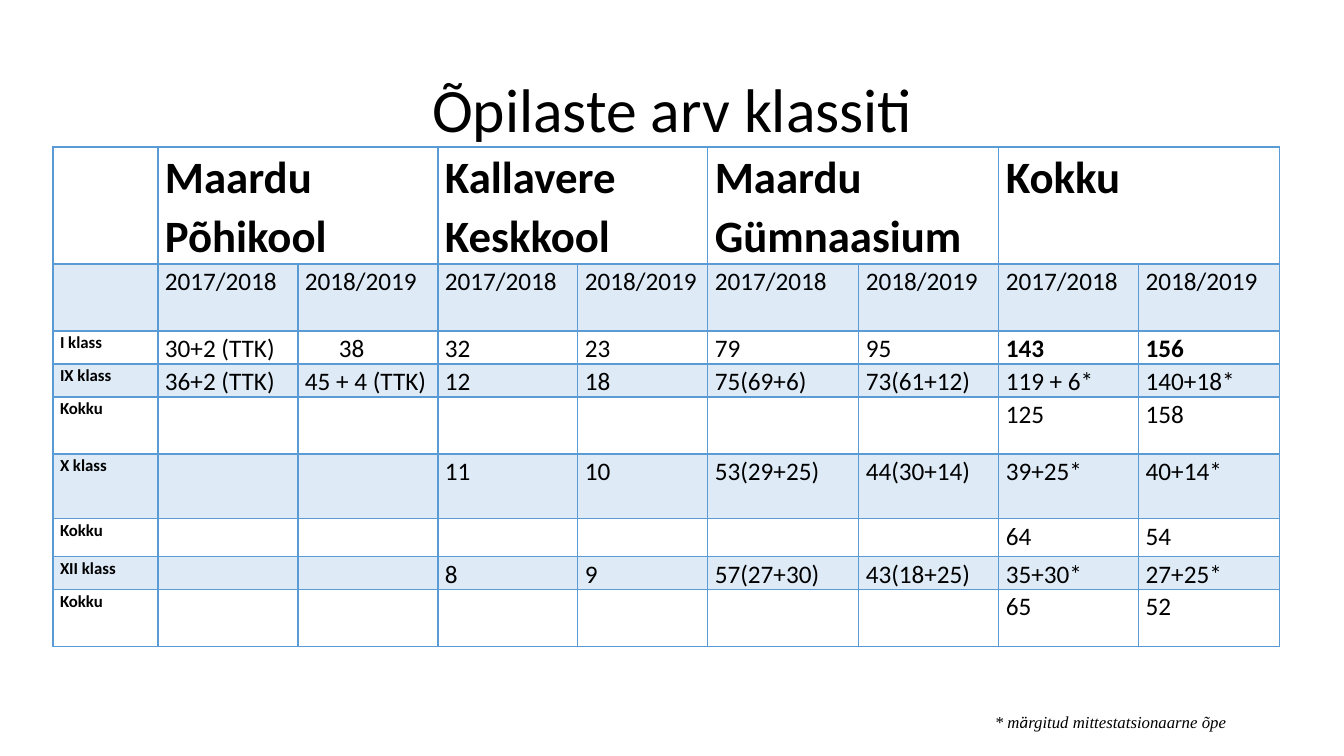
import pptx
import pptx.util
import pptx.dml.color
import pptx.enum.text
import pptx.oxml
import pptx.oxml.ns

PX = 9071.43  # EMU in one px, 100.8 px to the inch
BLUE = pptx.dml.color.RGBColor(0x5B, 0x9B, 0xD5)
PALE = pptx.dml.color.RGBColor(0xDE, 0xEB, 0xF7)
BLACK = pptx.dml.color.RGBColor(0, 0, 0)
ANCHOR = pptx.enum.text.MSO_ANCHOR
ALIGN = pptx.enum.text.PP_ALIGN

WIDTHS = [105, 140, 140, 140, 130, 151, 140, 140, 141]
HEIGHTS = [117, 67, 33, 33, 57, 65, 38, 33, 57]
SCHOOLS = ["Maardu Põhikool", "Kallavere Keskkool", "Maardu Gümnaasium", "Kokku"]
YEARS = ["2017/2018", "2018/2019"]
ROWS = [
    ["I klass", "30+2 (TTK)", "38", "32", "23", "79", "95", "143", "156"],
    ["IX klass", "36+2 (TTK)", "45 + 4 (TTK)", "12", "18", "75(69+6)", "73(61+12)",
     "119 + 6*", "140+18*"],
    ["Kokku", "", "", "", "", "", "", "125", "158"],
    ["X klass", "", "", "11", "10", "53(29+25)", "44(30+14)", "39+25*", "40+14*"],
    ["Kokku", "", "", "", "", "", "", "64", "54"],
    ["XII klass", "", "", "8", "9", "57(27+30)", "43(18+25)", "35+30*", "27+25*"],
    ["Kokku", "", "", "", "", "", "", "65", "52"],
]


def px(num):
    return pptx.util.Emu(round(num * PX))


def style(item, **vals):
    for key, val in vals.items():
        setattr(item, key, val)


def write(para, text, size, face="Calibri", **vals):
    run = para.add_run()
    run.text = text
    style(run.font, name=face, size=pptx.util.Pt(size), **vals)
    run.font.color.rgb = BLACK


def add_box(slide, box, **vals):
    frame = slide.shapes.add_textbox(*map(px, box)).text_frame
    style(frame, word_wrap=True, **vals)
    return frame.paragraphs[0]


def add_title(slide, box):
    para = add_box(slide, box, vertical_anchor=ANCHOR.MIDDLE)
    style(para, alignment=ALIGN.CENTER, line_spacing=0.9)
    write(para, "Õpilaste arv klassiti", 44)


def add_note(slide, box):
    para = add_box(slide, box, vertical_anchor=ANCHOR.TOP, margin_top=px(6))
    for text, face in [("* m", "Times New Roman"), ("ä", "Calibri"),
                       ("rgitud mittestatsionaarne õpe", "Times New Roman")]:
        write(para, text, 12, face, italic=True)


def edge(cell, sides):
    """Draw cell borders; sides maps L, R, T, B to a width in points."""
    props = cell._tc.get_or_add_tcPr()
    for spot, (side, wide) in enumerate(sides.items()):
        props.insert(spot, pptx.oxml.parse_xml(
            f'<a:ln{side} {pptx.oxml.ns.nsdecls("a")} w="{pptx.util.Pt(wide)}">'
            f'<a:solidFill><a:srgbClr val="{BLUE}"/></a:solidFill></a:ln{side}>'))


def add_grid(slide, box):
    heads = [""] + [text for name in SCHOOLS for text in (name, "")]
    cells = [heads, [""] + YEARS * len(SCHOOLS)] + ROWS
    grid = slide.shapes.add_table(len(HEIGHTS), len(WIDTHS), *map(px, box)).table
    style(grid, first_row=False, horz_banding=False)
    for col, wide in zip(grid.columns, WIDTHS):
        col.width = px(wide)
    for row, high in zip(grid.rows, HEIGHTS):
        row.height = px(high)

    for r, line in enumerate(cells):
        for c, text in enumerate(line):
            cell = grid.cell(r, c)
            inset = 41 if text == "38" else 7
            style(cell, margin_left=px(inset), margin_right=px(7),
                  margin_top=0, margin_bottom=0)
            # Shade every second row
            if r % 2:
                cell.fill.solid()
                cell.fill.fore_color.rgb = PALE
            else:
                cell.fill.background()
            edge(cell, {"L": 1, "R": 1, "T": 2 if r == 1 else 1, "B": 2 if r == 0 else 1})
            para = cell.text_frame.paragraphs[0]
            para.line_spacing = 1.07
            if text:
                size = 32 if r == 0 else 12 if c == 0 else 18
                bold = r == 0 or c == 0 or (r == 2 and c > 6)
                write(para, text, size, bold=bold)

    # Each school spans its two years
    for c in range(1, len(WIDTHS), 2):
        grid.cell(0, c).merge(grid.cell(0, c + 1))


def main():
    deck = pptx.Presentation()
    style(deck, slide_width=px(1344), slide_height=px(756))
    slide = deck.slides.add_slide(deck.slide_layouts[6])
    add_title(slide, (93, 40, 1159, 146))
    add_grid(slide, (53, 147, sum(WIDTHS), sum(HEIGHTS)))
    add_note(slide, (985, 706, 336, 61))
    deck.save("out.pptx")


if __name__ == "__main__":
    main()
